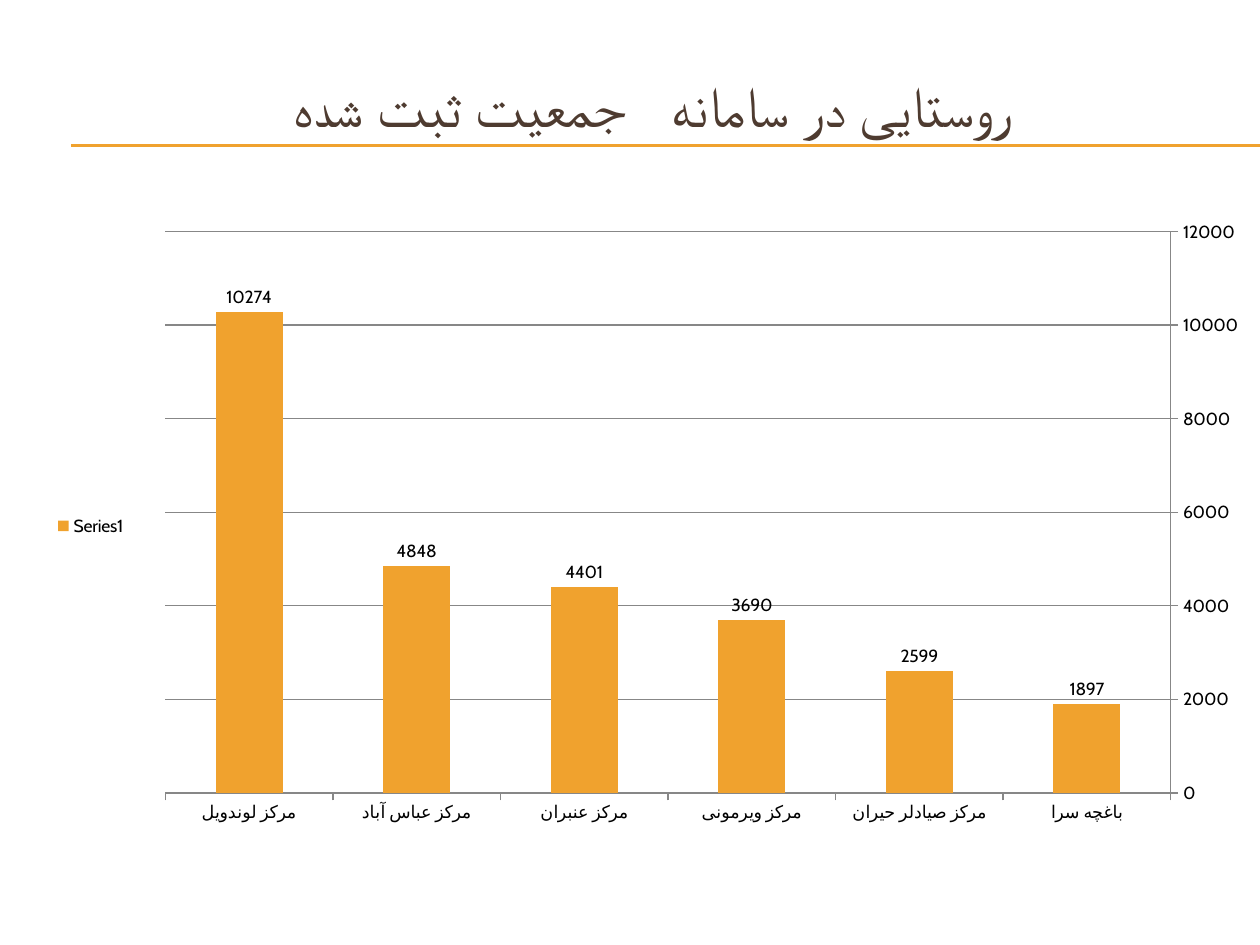
from lxml import etree
from pptx import Presentation, util as u
from pptx.chart import data
from pptx.dml import color
from pptx.enum import chart as ch, shapes, text
from pptx.oxml import ns

HUES = {"gold": "F0A22E", "brown": "4E3B30", "black": "000000", "gray": "878787"}
CENTERS = {
    "باغچه سرا": 1897,
    "مرکز صیادلر حیران": 2599,
    "مرکز ویرمونی": 3690,
    "مرکز عنبران": 4401,
    "مرکز عباس آباد": 4848,
    "مرکز لوندویل": 10274,
}
PLOT = {"x": 0.103, "y": 0.028, "w": 0.84, "h": 0.9}


def px(*nums):
    return [u.Emu(round(n * 914400 / 126)) for n in nums]


def hue(name):
    return color.RGBColor.from_string(HUES[name])


class Deck:
    font = "Cabin"

    def __init__(self, wide, high):
        self.prs = Presentation()
        self.prs.slide_width, self.prs.slide_height = px(wide, high)
        self.slide = self.prs.slides.add_slide(self.prs.slide_layouts[6])

    def style(self, font, size, name):
        font.name = self.font
        font.size = u.Pt(size)
        font.color.rgb = hue(name)

    def line(self, x1, y1, x2, y2):
        rule = self.slide.shapes.add_connector(
            shapes.MSO_CONNECTOR.STRAIGHT, *px(x1, y1, x2, y2))
        rule.line.color.rgb = hue("gold")
        rule.line.width = u.Pt(0.75)
        etree.SubElement(rule._element.spPr, ns.qn("a:effectLst"))

    def title(self, box, runs, shift):
        frame = self.slide.shapes.add_textbox(*px(*box)).text_frame
        frame.word_wrap = True
        frame.vertical_anchor = text.MSO_ANCHOR.MIDDLE
        frame.margin_left += px(2 * shift)[0]
        para = frame.paragraphs[0]
        para.alignment = text.PP_ALIGN.CENTER
        for words, space in runs:
            run = para.add_run()
            run.text = words
            self.style(run.font, 32.4, "brown")
            if space:
                run.font._element.set("spc", str(space))

    def chart(self, box, name, pairs, top, step):
        table = data.CategoryChartData()
        table.categories = list(pairs)
        table.add_series(name, list(pairs.values()))
        chart = self.slide.shapes.add_chart(
            ch.XL_CHART_TYPE.COLUMN_CLUSTERED, *px(*box), table).chart
        self.style(chart.font, 10, "black")
        chart.has_title = False
        chart.has_legend = True
        chart.legend.position = ch.XL_LEGEND_POSITION.LEFT
        chart.legend.include_in_layout = False
        self.axes(chart, top, step)
        self.bars(chart.plots[0])
        self.place(chart)

    def axes(self, chart, top, step):
        cat, val = chart.category_axis, chart.value_axis
        cat.reverse_order = True
        val.minimum_scale, val.maximum_scale = 0, top
        val.major_unit = step
        val.has_major_gridlines = True
        for part in (cat, val, val.major_gridlines):
            part.format.line.color.rgb = hue("gray")
            part.format.line.width = u.Pt(0.75)
        for axis in (cat, val):
            axis.major_tick_mark = ch.XL_TICK_MARK.OUTSIDE

    def bars(self, plot):
        plot.gap_width = 150
        plot.vary_by_categories = False
        fill = plot.series[0].format.fill
        fill.solid()
        fill.fore_color.rgb = hue("gold")
        plot.has_data_labels = True
        tags = plot.data_labels
        tags.show_value = True
        tags.position = ch.XL_LABEL_POSITION.OUTSIDE_END
        self.style(tags.font, 10, "black")

    def place(self, chart):
        area = chart._chartSpace.chart.plotArea
        for old in area.findall(ns.qn("c:layout")):
            area.remove(old)
        out = etree.Element(ns.qn("c:layout"))
        area.insert(0, out)
        man = etree.SubElement(out, ns.qn("c:manualLayout"))
        rules = {"layoutTarget": "inner", "xMode": "edge", "yMode": "edge", **PLOT}
        for tag, val in rules.items():
            etree.SubElement(man, ns.qn("c:" + tag)).set("val", str(val))


def main():
    deck = Deck(1260, 945)
    for y in (145, 146):
        deck.line(71, y, 1260, y)
    runs = [("روستایی در سامانه", 0), (" ", 1750), ("جمعیت ثبت شده", 0)]
    deck.title((42, 63, 1197, 84), runs, 13)
    deck.chart((42, 214, 1197, 624), "Series1", CENTERS, 12000, 2000)
    deck.prs.save("out.pptx")


if __name__ == "__main__":
    main()
